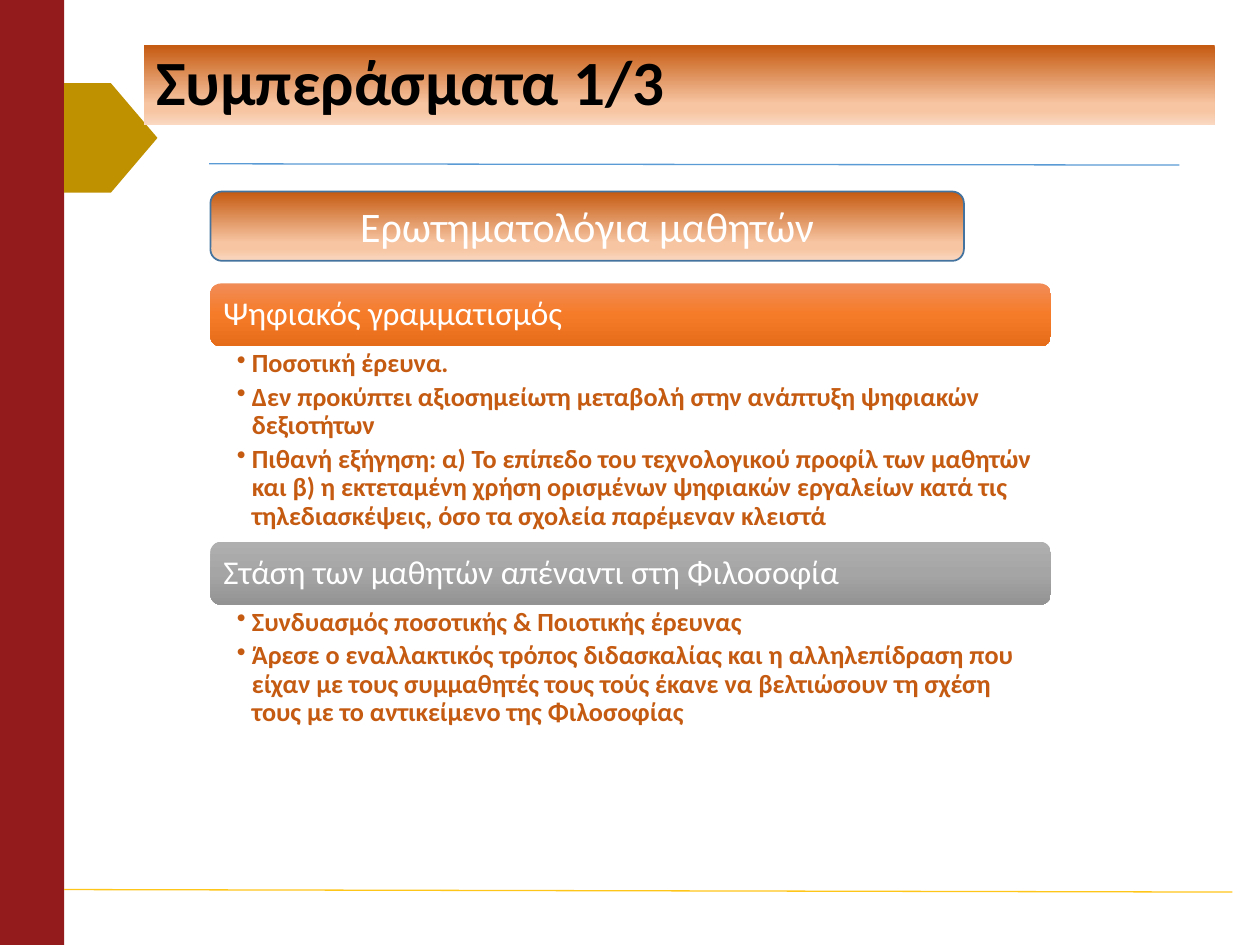
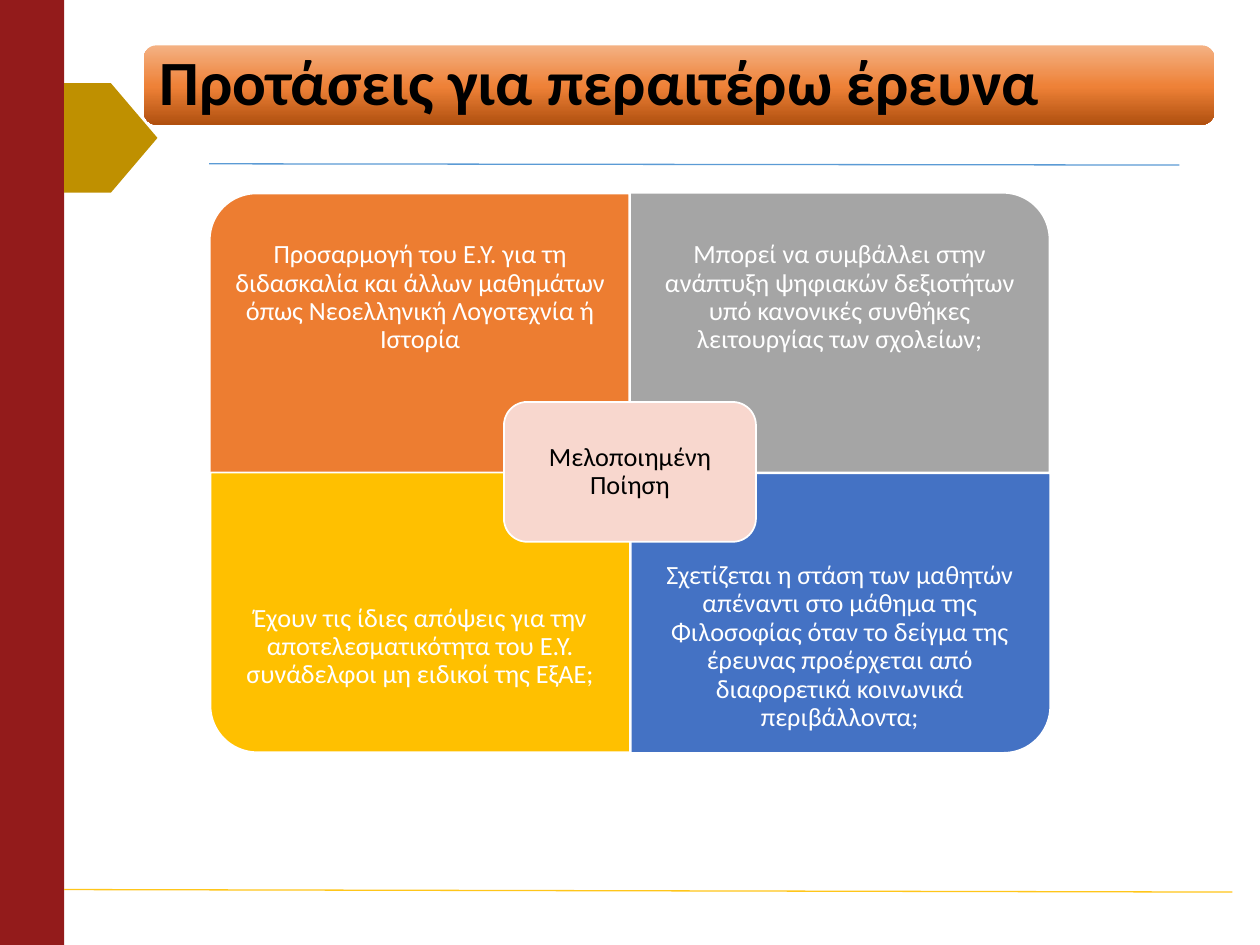
from dataclasses import dataclass

from lxml import etree
from pptx import Presentation
from pptx.dml.color import RGBColor
from pptx.enum.shapes import MSO_CONNECTOR, MSO_SHAPE
from pptx.enum.text import MSO_ANCHOR, PP_ALIGN
from pptx.oxml.ns import qn
from pptx.shapes.autoshape import Shape
from pptx.slide import Slide
from pptx.util import Emu, Pt

RECTANGLE = MSO_SHAPE.RECTANGLE
ROUNDED = MSO_SHAPE.ROUNDED_RECTANGLE
ONE_ROUND_CORNER = MSO_SHAPE.ROUND_1_RECTANGLE
PENTAGON = MSO_SHAPE.PENTAGON
STRAIGHT = MSO_CONNECTOR.STRAIGHT
LEFT, CENTER = PP_ALIGN.LEFT, PP_ALIGN.CENTER
TOP, MIDDLE = MSO_ANCHOR.TOP, MSO_ANCHOR.MIDDLE

EMU_PER_PX = 9144  # 100 px to the inch
FONT = "Calibri"
COLORS = {
    "band": "931B1B",
    "pentagon": "BF9000",
    "title_rule": "5B9BD5",
    "footer_rule": "FFC61A",
    "black": "000000",
    "white": "FFFFFF",
    "rust": "C55A11",
    "heading_border": "43739E",
    "orange": "ED7D31",
    "gray": "A5A5A5",
    "yellow": "FFC000",
    "blue": "4472C4",
    "pink": "F8D7CE",
}
# Gradients run from top to bottom: (percent, colour)
GRADIENTS = {
    "peach": ((0, "C55A11"), (74, "F7C5A2"), (83, "F7C5A2"), (100, "FAD8C1")),
    "copper": ((0, "F4B183"), (52, "EE8137"), (100, "B0500F")),
    "orange_bar": ((0, "F18C57"), (50, "F67B28"), (100, "E56C19")),
    "gray_bar": ((0, "AFAFAF"), (50, "A5A5A5"), (100, "939393")),
}


@dataclass(frozen=True)
class Box:
    left: int
    top: int
    width: int
    height: int

    def emu(self) -> tuple[Emu, Emu, Emu, Emu]:
        return px(self.left), px(self.top), px(self.width), px(self.height)

    def turned(self) -> "Box":
        """Swap width and height about the same centre."""
        shift = (self.width - self.height) / 2
        return Box(round(self.left + shift), round(self.top - shift), self.height, self.width)


@dataclass(frozen=True)
class TextStyle:
    size: int
    color: str
    bold: bool = False
    align: PP_ALIGN = LEFT
    anchor: MSO_ANCHOR = MIDDLE
    margins: tuple[int, int, int, int] = (10, 5, 10, 5)
    line_spacing: float = 0.9
    bulleted: bool = False


@dataclass(frozen=True)
class Section:
    heading: str
    gradient: str
    bullets: tuple[str, ...]


@dataclass(frozen=True)
class Quadrant:
    text: str
    color: str
    column: int
    row: int
    rotation: int


TITLE_STYLE = TextStyle(36, "black", bold=True)
GROUP_STYLE = TextStyle(24, "white", align=CENTER, line_spacing=1.0)
HEADING_STYLE = TextStyle(19, "white", margins=(8, 8, 8, 8))
BULLET_STYLE = TextStyle(15, "rust", bold=True, anchor=TOP, margins=(21, 3, 15, 3), bulleted=True)
QUADRANT_STYLE = TextStyle(15, "white", align=CENTER, margins=(12, 12, 12, 12))
CENTER_STYLE = TextStyle(15, "black", align=CENTER, margins=(6, 6, 6, 6))

TITLE_BOX = Box(114, 36, 850, 63)
CONTENT_LEFT, CONTENT_WIDTH = 167, 667
SECTIONS_TOP, HEADING_HEIGHT, BULLETS_HEIGHT = 225, 50, 155
QUADRANTS_TOP, QUADRANT_WIDTH, QUADRANT_HEIGHT = 153, 333, 222
QUADRANT_TEXT_HEIGHT = 167

SECTIONS = (
    Section("Ψηφιακός γραμματισμός", "orange_bar", (
        "Ποσοτική έρευνα.",
        "Δεν προκύπτει αξιοσημείωτη μεταβολή στην ανάπτυξη ψηφιακών δεξιοτήτων",
        "Πιθανή εξήγηση: α) Το επίπεδο του τεχνολογικού προφίλ των μαθητών και "
        "β) η εκτεταμένη χρήση ορισμένων ψηφιακών εργαλείων κατά τις "
        "τηλεδιασκέψεις, όσο τα σχολεία παρέμεναν κλειστά",
    )),
    Section("Στάση των μαθητών απέναντι στη Φιλοσοφία", "gray_bar", (
        "Συνδυασμός ποσοτικής & Ποιοτικής έρευνας",
        "Άρεσε ο εναλλακτικός τρόπος διδασκαλίας και η αλληλεπίδραση που είχαν "
        "με τους συμμαθητές τους τούς έκανε να βελτιώσουν τη σχέση τους με το "
        "αντικείμενο της Φιλοσοφίας",
    )),
)
QUADRANTS = (
    Quadrant("Προσαρμογή του Ε.Υ. για τη διδασκαλία και άλλων μαθημάτων όπως "
             "Νεοελληνική Λογοτεχνία ή Ιστορία", "orange", 0, 0, 270),
    Quadrant("Μπορεί να συμβάλλει στην ανάπτυξη ψηφιακών δεξιοτήτων υπό "
             "κανονικές συνθήκες λειτουργίας των σχολείων;", "gray", 1, 0, 0),
    Quadrant("Έχουν τις ίδιες απόψεις για την αποτελεσματικότητα του Ε.Υ. "
             "συνάδελφοι μη ειδικοί της ΕξΑΕ;", "yellow", 0, 1, 180),
    Quadrant("Σχετίζεται η στάση των μαθητών απέναντι στο μάθημα της Φιλοσοφίας "
             "όταν το δείγμα της έρευνας προέρχεται από διαφορετικά κοινωνικά "
             "περιβάλλοντα;", "blue", 1, 1, 90),
)


def px(length: int) -> Emu:
    return Emu(length * EMU_PER_PX)


def rgb(color: str) -> RGBColor:
    return RGBColor.from_string(COLORS[color])


def fill_gradient(shape: Shape, gradient: str) -> None:
    shape.fill.gradient()
    shape.fill.gradient_angle = 270
    stops = shape.element.spPr.find(".//" + qn("a:gsLst"))
    for stop in list(stops):
        stops.remove(stop)
    for percent, color in GRADIENTS[gradient]:
        stop = etree.SubElement(stops, qn("a:gs"), pos=str(percent * 1000))
        etree.SubElement(stop, qn("a:srgbClr"), val=color)


def add_box(slide: Slide, kind: MSO_SHAPE, box: Box, fill: str, border: str | None = None) -> Shape:
    """Draw a preset shape; fill names a gradient or a plain colour."""
    shape = slide.shapes.add_shape(kind, *box.emu())
    shape.shadow.inherit = False
    if fill in GRADIENTS:
        fill_gradient(shape, fill)
    else:
        shape.fill.solid()
        shape.fill.fore_color.rgb = rgb(fill)
    if border:
        shape.line.color.rgb = rgb(border)
        shape.line.width = Pt(1)
    else:
        shape.line.fill.background()
    return shape


def add_rule(slide: Slide, start: tuple[int, int], end: tuple[int, int], color: str) -> None:
    points = [px(value) for value in (*start, *end)]
    rule = slide.shapes.add_connector(STRAIGHT, *points)
    rule.line.color.rgb = rgb(color)
    rule.line.width = Pt(0.75)
    etree.SubElement(rule.element.spPr, qn("a:effectLst"))


def write_text(shape: Shape, text: str, style: TextStyle) -> None:
    frame = shape.text_frame
    frame.text = text
    frame.word_wrap = True
    frame.vertical_anchor = style.anchor
    (frame.margin_left, frame.margin_top,
     frame.margin_right, frame.margin_bottom) = map(px, style.margins)
    for paragraph in frame.paragraphs:
        paragraph.alignment = style.align
        paragraph.line_spacing = style.line_spacing
        if style.bulleted:
            paragraph.space_after = Pt(3)
            properties = paragraph._p.get_or_add_pPr()
            properties.set("marL", str(px(12)))
            properties.set("indent", str(px(-12)))
            etree.SubElement(properties, qn("a:buChar"), char="•")
        for run in paragraph.runs:
            run.font.name = FONT
            run.font.size = Pt(style.size)
            run.font.bold = style.bold
            run.font.color.rgb = rgb(style.color)


def add_text(slide: Slide, box: Box, text: str, style: TextStyle) -> None:
    write_text(slide.shapes.add_textbox(*box.emu()), text, style)


def add_framed_slide(presentation: Presentation, title: str, kind: MSO_SHAPE, fill: str) -> Slide:
    """Add a blank slide with the side band, rules and title bar."""
    slide = presentation.slides.add_slide(presentation.slide_layouts[6])
    add_box(slide, RECTANGLE, Box(0, 0, 51, 750), "band")
    add_rule(slide, (166, 130), (936, 131), "title_rule")
    add_rule(slide, (51, 706), (978, 708), "footer_rule")
    add_box(slide, PENTAGON, Box(51, 66, 74, 87), "pentagon")
    write_text(add_box(slide, kind, TITLE_BOX, fill), title, TITLE_STYLE)
    return slide


def build_conclusions(presentation: Presentation) -> None:
    slide = add_framed_slide(presentation, "Συμπεράσματα 1/3", RECTANGLE, "peach")
    group = add_box(slide, ROUNDED, Box(CONTENT_LEFT, 152, 598, 55), "peach", "heading_border")
    write_text(group, "Ερωτηματολόγια μαθητών", GROUP_STYLE)
    for index, section in enumerate(SECTIONS):
        top = SECTIONS_TOP + index * (HEADING_HEIGHT + BULLETS_HEIGHT)
        heading_box = Box(CONTENT_LEFT, top, CONTENT_WIDTH, HEADING_HEIGHT)
        heading = add_box(slide, ROUNDED, heading_box, section.gradient)
        write_text(heading, section.heading, HEADING_STYLE)
        bullets_box = Box(CONTENT_LEFT, top + HEADING_HEIGHT, CONTENT_WIDTH, BULLETS_HEIGHT)
        add_text(slide, bullets_box, "\n".join(section.bullets), BULLET_STYLE)


def add_quadrant(slide: Slide, quadrant: Quadrant) -> None:
    """Draw a quarter rounded at its outer corner, its text away from the centre."""
    left = CONTENT_LEFT + quadrant.column * QUADRANT_WIDTH
    top = QUADRANTS_TOP + quadrant.row * QUADRANT_HEIGHT
    box = Box(left, top, QUADRANT_WIDTH, QUADRANT_HEIGHT)
    sideways = quadrant.rotation % 180 == 90
    shape = add_box(slide, ONE_ROUND_CORNER, box.turned() if sideways else box,
                    quadrant.color, "white")
    shape.rotation = quadrant.rotation
    text_top = top + quadrant.row * (QUADRANT_HEIGHT - QUADRANT_TEXT_HEIGHT)
    text_box = Box(left, text_top, QUADRANT_WIDTH, QUADRANT_TEXT_HEIGHT)
    add_text(slide, text_box, quadrant.text, QUADRANT_STYLE)


def build_proposals(presentation: Presentation) -> None:
    slide = add_framed_slide(presentation, "Προτάσεις για περαιτέρω έρευνα", ROUNDED, "copper")
    for quadrant in QUADRANTS:
        add_quadrant(slide, quadrant)
    center = add_box(slide, ROUNDED, Box(400, 319, 200, 111), "pink", "white")
    write_text(center, "Μελοποιημένη Ποίηση", CENTER_STYLE)


def main() -> None:
    presentation = Presentation()
    presentation.slide_width = px(1000)
    presentation.slide_height = px(750)
    build_conclusions(presentation)
    build_proposals(presentation)
    presentation.save("out.pptx")


if __name__ == "__main__":
    main()
